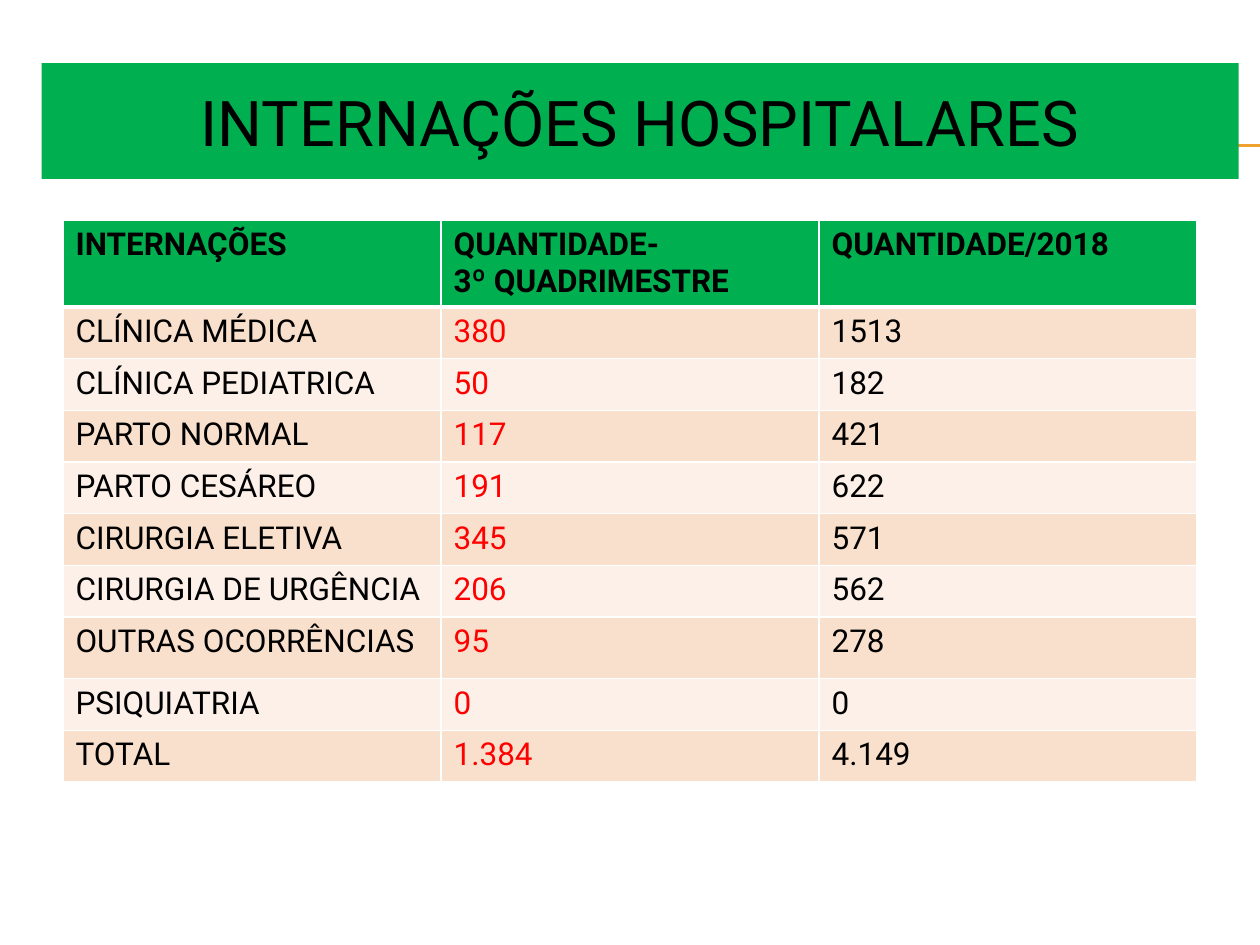
from lxml.etree import SubElement
from pptx import Presentation
from pptx.dml.color import RGBColor
from pptx.enum.shapes import MSO_CONNECTOR as Connector
from pptx.enum.text import MSO_ANCHOR as Anchor, PP_ALIGN as Align
from pptx.oxml.ns import qn
from pptx.util import Inches, Pt

GREEN = RGBColor(0x00, 0xB0, 0x50)
ORANGE = RGBColor(0xF0, 0xA2, 0x2E)
PEACH = RGBColor(0xF9, 0xE0, 0xCD)
CREAM = RGBColor(0xFC, 0xF0, 0xE8)
WHITE = RGBColor(0xFF, 0xFF, 0xFF)
BLACK = RGBColor(0x00, 0x00, 0x00)
RED = RGBColor(0xFF, 0x00, 0x00)
FONT = "Roboto"

HEADER = ["INTERNAÇÕES", "QUANTIDADE-\n3º QUADRIMESTRE", "QUANTIDADE/2018"]
ADMISSIONS = [
    ("CLÍNICA MÉDICA", "380", "1513"),
    ("CLÍNICA PEDIATRICA", "50", "182"),
    ("PARTO NORMAL", "117", "421"),
    ("PARTO CESÁREO", "191", "622"),
    ("CIRURGIA ELETIVA", "345", "571"),
    ("CIRURGIA DE URGÊNCIA", "206", "562"),
    ("OUTRAS OCORRÊNCIAS", "95", "278"),
    ("PSIQUIATRIA", "0", "0"),
    ("TOTAL", "1.384", "4.149"),
]
HEADER_HEIGHT, ROW_HEIGHT, TALL_HEIGHT = 0.67, 0.41, 0.49
TALL_LABEL = "OUTRAS OCORRÊNCIAS"


def write_text(frame, text, size=18, color=BLACK, bold=False, align=Align.LEFT):
    """Fill a text frame with one formatted paragraph per line of text."""
    for index, line in enumerate(text.split("\n")):
        para = frame.add_paragraph() if index else frame.paragraphs[0]
        para.alignment = align
        span = para.add_run()
        span.text = line
        span.font.name = FONT
        span.font.size = Pt(size)
        span.font.bold = bold
        span.font.color.rgb = color


def add_rules(page, left, top, width, gap):
    """Draw the pair of thin rules behind everything else on the page."""
    for index in range(2):
        y = Inches(top + index * gap)
        rule = page.shapes.add_connector(
            Connector.STRAIGHT, Inches(left), y, Inches(left + width), y)
        rule.line.color.rgb = ORANGE
        rule.line.width = Pt(0.75)
        SubElement(rule.element.spPr, qn("a:effectLst"))
        page.shapes.element.insert(2 + index, rule.element)


def add_title(page, left, top, width, height):
    """Place the title placeholder as a green banner."""
    title = page.shapes.title
    title.left, title.top = Inches(left), Inches(top)
    title.width, title.height = Inches(width), Inches(height)
    title.fill.solid()
    title.fill.fore_color.rgb = GREEN
    title.text_frame.word_wrap = True
    title.text_frame.vertical_anchor = Anchor.MIDDLE
    write_text(title.text_frame, "INTERNAÇÕES HOSPITALARES", size=36, align=Align.CENTER)


def set_borders(cell, top, bottom):
    """Give a cell white borders, with the top and bottom widths in points."""
    properties = cell._tc.get_or_add_tcPr()
    for side, width in (("L", 1), ("R", 1), ("T", top), ("B", bottom)):
        line = SubElement(properties, qn(f"a:ln{side}"), w=str(Pt(width)))
        fill = SubElement(line, qn("a:solidFill"))
        SubElement(fill, qn("a:srgbClr"), val=str(WHITE))


def add_admissions_table(page, left, top, width):
    """Build the banded table of admissions with a green header."""
    rows = [HEADER, *ADMISSIONS]
    heights = [HEADER_HEIGHT] + [
        TALL_HEIGHT if row[0] == TALL_LABEL else ROW_HEIGHT for row in ADMISSIONS]
    table = page.shapes.add_table(
        len(rows), len(HEADER), Inches(left), Inches(top),
        Inches(width), Inches(sum(heights))).table
    for column in table.columns:
        column.width = Inches(width / len(HEADER))
    for r, (values, height) in enumerate(zip(rows, heights)):
        table.rows[r].height = Inches(height)
        is_header = r == 0
        band = GREEN if is_header else PEACH if r % 2 else CREAM
        for c, value in enumerate(values):
            cell = table.cell(r, c)
            set_borders(cell, top=3 if r == 1 else 1, bottom=3 if is_header else 1)
            cell.fill.solid()
            cell.fill.fore_color.rgb = band
            color = RED if c == 1 and not is_header else BLACK
            write_text(cell.text_frame, value, color=color, bold=is_header)


def main():
    """Build the hospital admissions slide and save it."""
    deck = Presentation()
    deck.slide_width, deck.slide_height = Inches(10), Inches(7.5)
    page = deck.slides.add_slide(deck.slide_layouts[5])
    add_rules(page, 0.56, 1.15, 9.44, 0.01)
    add_title(page, 0.33, 0.5, 9.5, 0.92)
    add_admissions_table(page, 0.5, 1.75, 9)
    deck.save("out.pptx")


if __name__ == "__main__":
    main()
